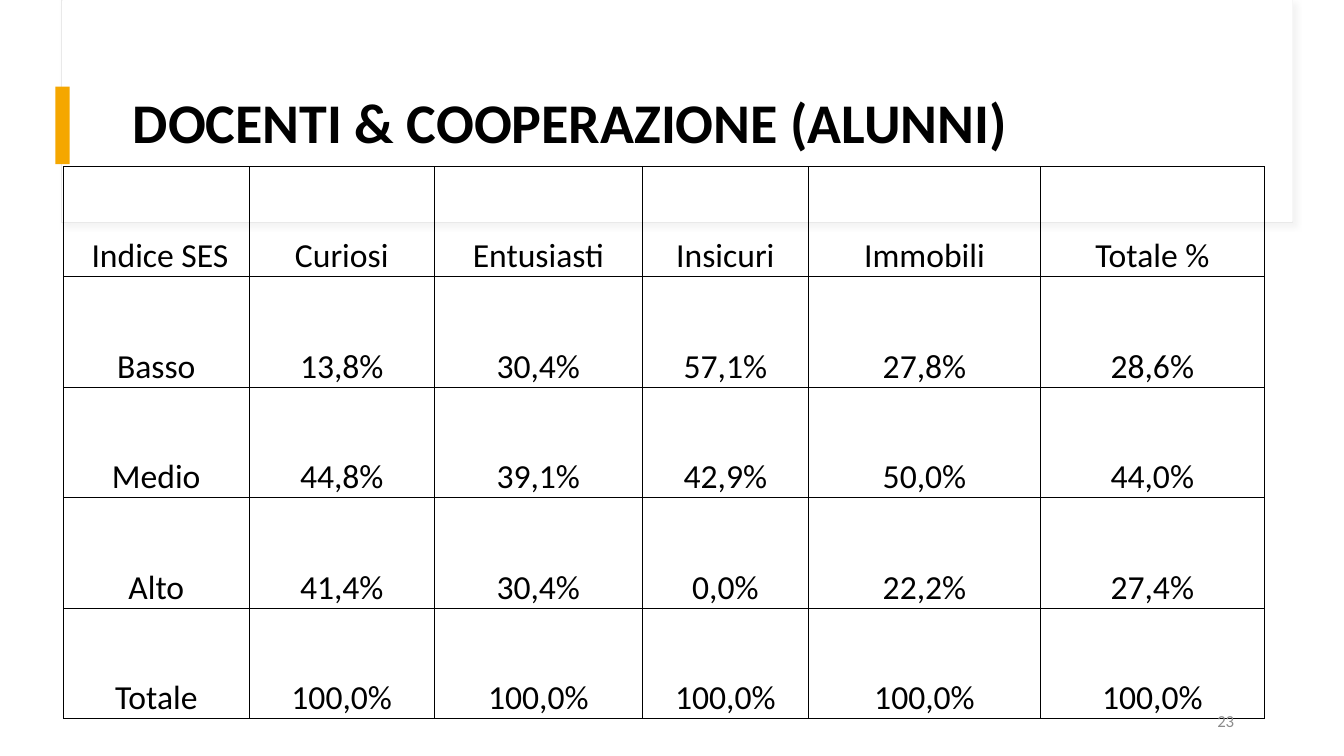
from lxml import etree
from pptx import Presentation
from pptx.dml.color import RGBColor
from pptx.enum.shapes import MSO_SHAPE as SHAPE
from pptx.enum.text import MSO_ANCHOR as ANCHOR, PP_ALIGN as ALIGN
from pptx.oxml import parse_xml
from pptx.oxml.ns import nsdecls, qn
from pptx.util import Inches, Pt

TITLE = "DOCENTI & COOPERAZIONE (ALUNNI)"
PAGE = "23"
ROWS = [
    (" Indice SES", "Curiosi", "Entusiasti", "Insicuri", "Immobili", "Totale %"),
    ("Basso", "13,8%", "30,4%", "57,1%", "27,8%", "28,6%"),
    ("Medio", "44,8%", "39,1%", "42,9%", "50,0%", "44,0%"),
    ("Alto", "41,4%", "30,4%", "0,0%", "22,2%", "27,4%"),
    ("Totale", "100,0%", "100,0%", "100,0%", "100,0%", "100,0%"),
]
COL_WIDTHS = [1.84, 1.84, 2.06, 1.65, 2.3, 2.22]
TABLE_LEFT, TABLE_TOP, TABLE_HEIGHT = 0.63, 1.65, 5.48
COLORS = {"white": "FFFFFF", "frame": "E9E9E9", "shadow": "D9D9D9",
          "accent": "F5A700", "text": "000000", "page": "8C8C8C"}
FONT = "Calibri"


def rgb(name):
    return RGBColor.from_string(COLORS[name])


def add_rect(s, box, fill, line=None):
    sp = s.shapes.add_shape(SHAPE.RECTANGLE, *map(Inches, box))
    sp.shadow.inherit = False
    sp.fill.solid()
    sp.fill.fore_color.rgb = rgb(fill)
    if line:
        sp.line.color.rgb = rgb(line)
        sp.line.width = Pt(0.75)
    else:
        sp.line.fill.background()
    return sp


def add_shadow(sp):
    effects = sp._element.spPr.find(qn("a:effectLst"))
    effects.append(parse_xml(
        f'<a:outerShdw {nsdecls("a")} blurRad="{Pt(4)}" dist="{Pt(3)}" dir="2700000" '
        f'algn="tl" rotWithShape="0"><a:srgbClr val="{COLORS["shadow"]}">'
        '<a:alpha val="30000"/></a:srgbClr></a:outerShdw>'))


def write(tf, text, size, color, align, bold=False):
    tf.text = text
    p = tf.paragraphs[0]
    p.alignment = align
    font = p.runs[0].font
    font.name, font.size, font.bold = FONT, Pt(size), bold
    font.color.rgb = rgb(color)
    return p


def add_text(s, box, *style):
    tf = s.shapes.add_textbox(*map(Inches, box)).text_frame
    tf.word_wrap = True
    tf.vertical_anchor = ANCHOR.MIDDLE
    return write(tf, *style)


def add_borders(cell):
    tcPr = cell._tc.get_or_add_tcPr()
    for side in ("a:lnL", "a:lnR", "a:lnT", "a:lnB"):
        ln = etree.SubElement(tcPr, qn(side), w=str(Pt(0.5)))
        fill = etree.SubElement(ln, qn("a:solidFill"))
        etree.SubElement(fill, qn("a:srgbClr"), val=COLORS["text"])


def add_ses_table(s):
    box = (TABLE_LEFT, TABLE_TOP, sum(COL_WIDTHS), TABLE_HEIGHT)
    table = s.shapes.add_table(len(ROWS), len(COL_WIDTHS), *map(Inches, box)).table
    table.first_row = table.horz_banding = False
    for col, width in zip(table.columns, COL_WIDTHS):
        col.width = Inches(width)
    for i, row in enumerate(ROWS):
        for j, text in enumerate(row):
            cell = table.cell(i, j)
            add_borders(cell)
            cell.fill.background()
            cell.vertical_anchor = ANCHOR.BOTTOM
            cell.margin_left = cell.margin_right = Inches(0.06)
            cell.margin_top = cell.margin_bottom = 0
            p = write(cell.text_frame, text, 24, "text", ALIGN.CENTER)
            p.line_spacing = 1.07
            p.space_after = Pt(8)


def main():
    prs = Presentation()
    prs.slide_width, prs.slide_height = Inches(13.33), Inches(7.5)
    s = prs.slides.add_slide(prs.slide_layouts[6])
    add_shadow(add_rect(s, (0.61, 0, 12.21, 2.21), "white", "frame"))
    add_rect(s, (0.62, 0, 12.2, 2.2), "white")
    add_rect(s, (0.55, 0.86, 0.14, 0.77), "accent")
    p = add_text(s, (1.22, 0.6, 11.12, 1.29), TITLE, 40, "text", ALIGN.LEFT, True)
    p.line_spacing = 0.9
    add_ses_table(s)
    add_text(s, (9.34, 6.95, 3, 0.4), PAGE, 12, "page", ALIGN.RIGHT)
    prs.save("out.pptx")


if __name__ == "__main__":
    main()
